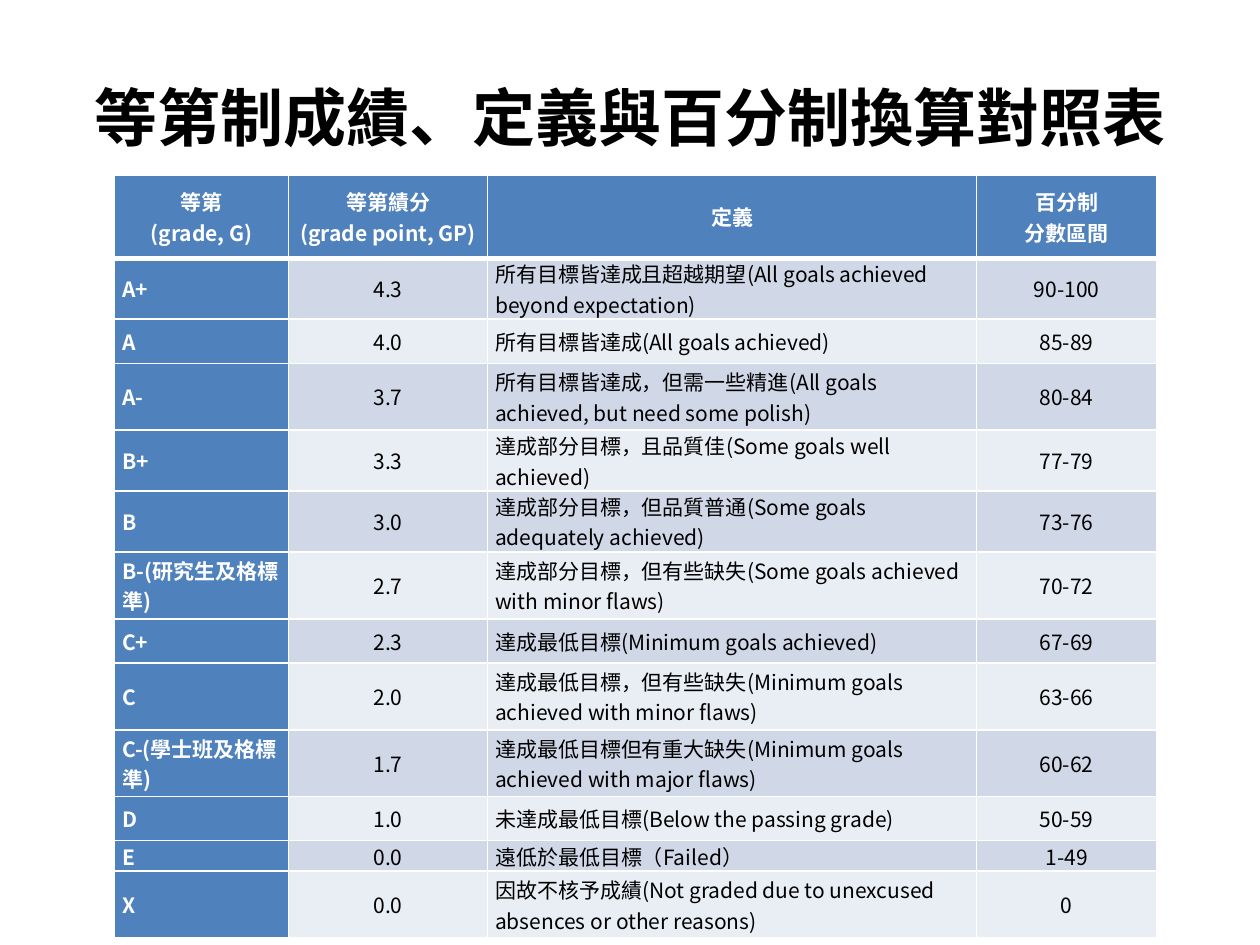
from dataclasses import dataclass

from lxml import etree
from pptx import Presentation
from pptx.dml.color import RGBColor
from pptx.enum.text import MSO_ANCHOR, PP_ALIGN
from pptx.oxml.ns import qn
from pptx.util import Pt

CENTER, LEFT = PP_ALIGN.CENTER, PP_ALIGN.LEFT
MIDDLE = MSO_ANCHOR.MIDDLE
TITLE_ONLY = 5
GRADE, DEFINITION = 0, 2  # column positions


@dataclass(frozen=True)
class Theme:
    font: str = "Noto Sans CJK SC"
    title_size: int = 36
    table_size: int = 12
    black: str = "000000"
    white: str = "FFFFFF"
    header: str = "4F81BD"
    bands: tuple = ("E9EDF4", "D0D8E8")  # even rows, odd rows
    thin_line: int = 1
    thick_line: int = 3


THEME = Theme()
TITLE = "等第制成績、定義與百分制換算對照表"
COLUMN_WIDTHS = (99.4, 113.8, 279.4, 103)
ROW_HEIGHTS = (47.5, 31.7, 25.2, 38.2, 31.7, 31.7, 38.2,
               25.2, 38.2, 38.2, 25.2, 15.8, 38.2)
HANGING_INDENT = 28
HANGING_LIMIT = 10  # longer lines wrap, so they are not indented
GRADES = (
    ("等第\n(grade, G)", "等第績分\n(grade point, GP)", "定義", "百分制\n分數區間"),
    ("A+", "4.3", "所有目標皆達成且超越期望(All goals achieved beyond expectation)", "90-100"),
    ("A", "4.0", "所有目標皆達成(All goals achieved)", "85-89"),
    ("A-", "3.7", "所有目標皆達成，但需一些精進(All goals achieved, but need some polish)", "80-84"),
    ("B+", "3.3", "達成部分目標，且品質佳(Some goals well achieved)", "77-79"),
    ("B", "3.0", "達成部分目標，但品質普通(Some goals adequately achieved)", "73-76"),
    ("B-(研究生及格標準)", "2.7", "達成部分目標，但有些缺失(Some goals achieved with minor flaws)", "70-72"),
    ("C+", "2.3", "達成最低目標(Minimum goals achieved)", "67-69"),
    ("C", "2.0", "達成最低目標，但有些缺失(Minimum goals achieved with minor flaws)", "63-66"),
    ("C-(學士班及格標準)", "1.7", "達成最低目標但有重大缺失(Minimum goals achieved with major flaws)", "60-62"),
    ("D", "1.0", "未達成最低目標(Below the passing grade)", "50-59"),
    ("E", "0.0", "遠低於最低目標（Failed）", "1-49"),
    ("X", "0.0", "因故不核予成績(Not graded due to unexcused absences or other reasons)", "0"),
)


def format_paragraph(paragraph, size, color, bold, alignment):
    paragraph.alignment = alignment
    font = paragraph.font
    font.size = Pt(size)
    font.bold = bold
    font.color.rgb = RGBColor.from_string(color)
    font.name = THEME.font
    # East Asian characters need their own typeface entry
    properties = paragraph._p.get_or_add_pPr().find(qn("a:defRPr"))
    etree.SubElement(properties, qn("a:ea"), typeface=THEME.font)


def set_borders(cell, top, bottom):
    properties = cell._tc.get_or_add_tcPr()
    widths = {"L": THEME.thin_line, "R": THEME.thin_line, "T": top, "B": bottom}
    for position, (side, width) in enumerate(widths.items()):
        line = etree.Element(qn(f"a:ln{side}"), w=str(Pt(width)))
        fill = etree.SubElement(line, qn("a:solidFill"))
        etree.SubElement(fill, qn("a:srgbClr"), val=THEME.white)
        properties.insert(position, line)


def fill_cell(cell, text, row, column):
    is_header = row == 0
    is_heading = is_header or column == GRADE
    cell.text = text
    cell.vertical_anchor = MIDDLE
    cell.margin_left = cell.margin_right = Pt(4.3)
    cell.margin_top = cell.margin_bottom = 0
    cell.fill.solid()
    background = THEME.header if is_heading else THEME.bands[row % 2]
    cell.fill.fore_color.rgb = RGBColor.from_string(background)

    is_centered = is_header or column not in (GRADE, DEFINITION)
    longest = max(len(line) for line in text.split("\n"))
    for paragraph in cell.text_frame.paragraphs:
        format_paragraph(paragraph, THEME.table_size,
                         THEME.white if is_heading else THEME.black,
                         is_heading, CENTER if is_centered else LEFT)
        if column != DEFINITION and longest <= HANGING_LIMIT:
            properties = paragraph._p.get_or_add_pPr()
            properties.set("marL", str(Pt(HANGING_INDENT)))
            properties.set("indent", str(-Pt(HANGING_INDENT)))

    # The thick rule lies between the header and the first grade
    set_borders(cell,
                top=THEME.thick_line if row == 1 else THEME.thin_line,
                bottom=THEME.thick_line if is_header else THEME.thin_line)


def add_title(slide):
    title = slide.shapes.title
    title.left, title.top = Pt(36), Pt(21.6)
    title.width, title.height = Pt(648), Pt(90)
    title.text_frame.text = TITLE
    title.text_frame.vertical_anchor = MIDDLE
    format_paragraph(title.text_frame.paragraphs[0], THEME.title_size,
                     THEME.black, True, CENTER)


def add_grade_table(slide):
    shape = slide.shapes.add_table(
        len(GRADES), len(COLUMN_WIDTHS), Pt(65.5), Pt(100.1),
        Pt(sum(COLUMN_WIDTHS)), Pt(sum(ROW_HEIGHTS)))
    table = shape.table
    table.first_col = True
    for column, width in zip(table.columns, COLUMN_WIDTHS):
        column.width = Pt(width)
    for row, height in zip(table.rows, ROW_HEIGHTS):
        row.height = Pt(height)
    for row, texts in enumerate(GRADES):
        for column, text in enumerate(texts):
            fill_cell(table.cell(row, column), text, row, column)


def main():
    presentation = Presentation()
    presentation.slide_width, presentation.slide_height = Pt(720), Pt(540)
    slide = presentation.slides.add_slide(presentation.slide_layouts[TITLE_ONLY])
    add_title(slide)
    add_grade_table(slide)
    presentation.save("out.pptx")


if __name__ == "__main__":
    main()
